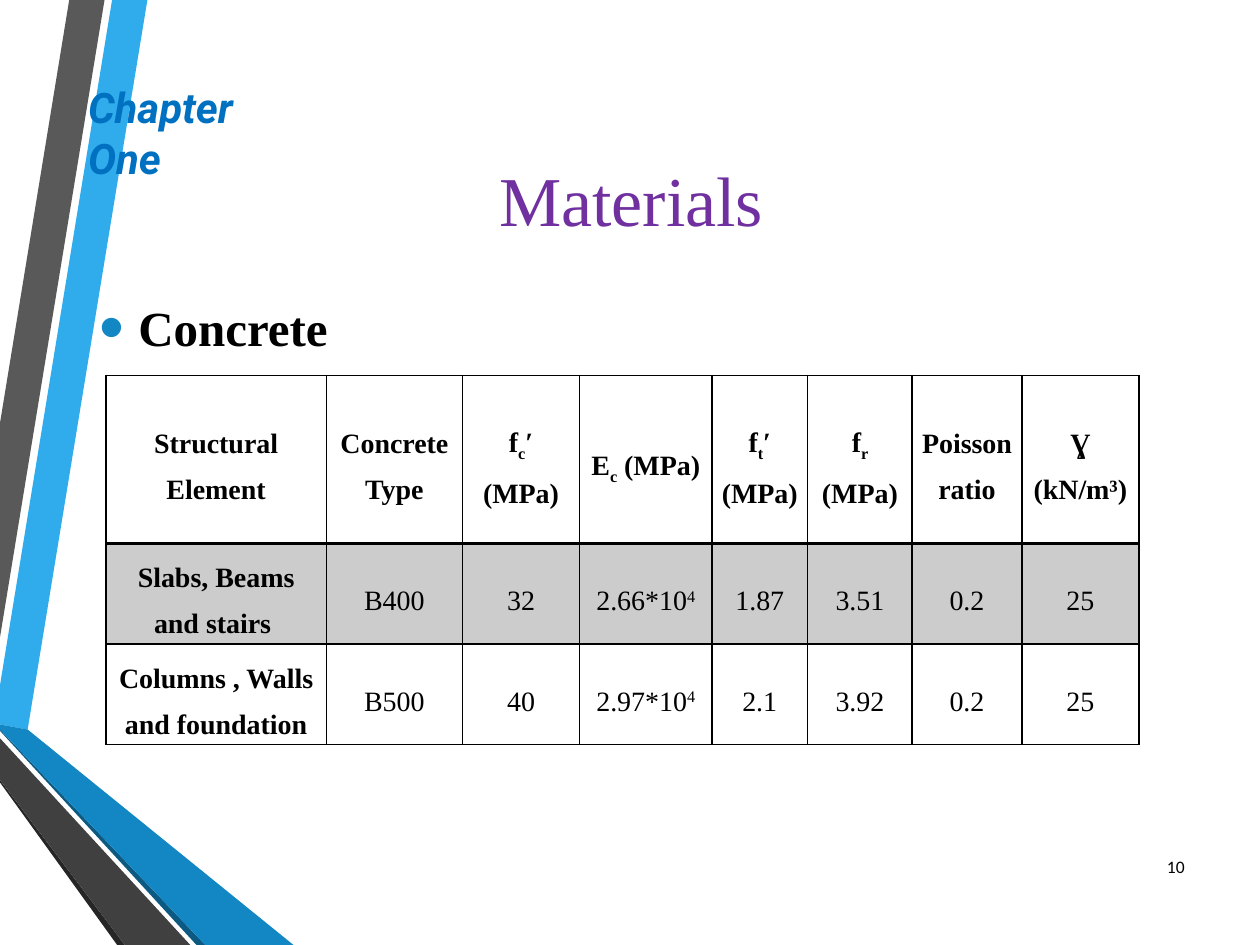
"""Build the concrete materials slide with its property table."""
from typing import NamedTuple

import pptx
import pptx.dml.color
import pptx.enum.text
import pptx.oxml
import pptx.oxml.ns
import pptx.util

Inches = pptx.util.Inches
Pt = pptx.util.Pt
RGBColor = pptx.dml.color.RGBColor
ALIGN = pptx.enum.text.PP_ALIGN
ANCHOR = pptx.enum.text.MSO_ANCHOR
NS = pptx.oxml.ns.nsdecls("a")

BLACK = RGBColor(0x00, 0x00, 0x00)
PURPLE = RGBColor(0x70, 0x30, 0xA0)
BLUE = RGBColor(0x00, 0x70, 0xC0)
SKY = RGBColor(0x30, 0xAC, 0xEC)
OCEAN = RGBColor(0x12, 0x87, 0xC3)
NAVY = RGBColor(0x0C, 0x5A, 0x82)
GRAY = RGBColor(0x59, 0x59, 0x59)
CHARCOAL = RGBColor(0x40, 0x40, 0x40)
SHADE = RGBColor(0x26, 0x26, 0x26)
BAND = RGBColor(0xCC, 0xCC, 0xCC)
SERIF = "Times New Roman"
SUB, SUPER = -25000, 30000


class Run(NamedTuple):
    text: str
    baseline: int = 0


class Ribbon(NamedTuple):
    color: RGBColor
    points: list[tuple[float, float]]


RIBBONS = [
    Ribbon(SKY, [(0, 5.44), (0, 5.75), (0.22, 5.79), (1.17, 0), (0.89, 0)]),
    Ribbon(GRAY, [(0.83, 0), (0.55, 0), (0, 3.36), (0, 5.06)]),
    Ribbon(SHADE, [(0, 6.19), (0, 6.21), (0.93, 7.5), (0.99, 7.5)]),
    Ribbon(NAVY, [(0, 5.79), (0, 5.8), (1.56, 7.5), (1.63, 7.5)]),
    Ribbon(OCEAN, [(0, 5.79), (1.63, 7.5), (2.33, 7.5), (0.22, 5.79), (0, 5.75)]),
    Ribbon(CHARCOAL, [(0, 6.19), (0.99, 7.5), (1.51, 7.5), (0, 5.86)]),
]

COLUMNS = [1.75, 1.08, 0.93, 1.05, 0.76, 0.83, 0.87, 0.93]
ROWS = [1.33, 0.65, 0.63]
CELLS = [
    ["Structural Element", "Concrete Type",
     [Run("f"), Run("c", SUB), Run("ʹ (MPa)")],
     [Run("E"), Run("c", SUB), Run(" (MPa)")],
     [Run("f"), Run("t", SUB), Run("ʹ (MPa)")],
     [Run("f"), Run("r ", SUB), Run("(MPa)")],
     "Poisson ratio", "Ɣ (kN/m³)"],
    ["Slabs, Beams and stairs ", "B400", "32", [Run("2.66*10"), Run("4", SUPER)],
     "1.87", "3.51", "0.2", "25"],
    ["Columns , Walls and foundation", "B500", "40", [Run("2.97*10"), Run("4", SUPER)],
     "2.1", "3.92", "0.2", "25"],
]


def write(tf, text: str | list[Run], *, size: float, font: str = SERIF,
          color: RGBColor = BLACK, bold: bool = False, italic: bool = False,
          align=ALIGN.LEFT, anchor=ANCHOR.MIDDLE):
    tf.word_wrap = True
    tf.vertical_anchor = anchor
    p = tf.paragraphs[0]
    p.alignment = align
    for part in [Run(text)] if isinstance(text, str) else text:
        r = p.add_run()
        r.text = part.text
        r.font.name, r.font.size = font, Pt(size)
        r.font.bold, r.font.italic = bold, italic
        r.font.color.rgb = color
        if part.baseline:
            r.font._element.set("baseline", str(part.baseline))
    return p


def add_box(s, left: float, top: float, width: float, height: float):
    return s.shapes.add_textbox(*map(Inches, (left, top, width, height))).text_frame


def add_ribbon(s, ribbon: Ribbon) -> None:
    points = [(Inches(x), Inches(y)) for x, y in ribbon.points]
    builder = s.shapes.build_freeform(*points[0])
    builder.add_line_segments(points[1:], close=True)
    sp = builder.convert_to_shape()
    sp.shadow.inherit = False
    sp.fill.solid()
    sp.fill.fore_color.rgb = ribbon.color
    sp.line.fill.background()


def add_bullet(p, color: RGBColor) -> None:
    pPr = p._p.get_or_add_pPr()
    pPr.set("marL", str(Inches(0.31)))
    pPr.set("indent", str(-Inches(0.31)))
    for xml in (f'<a:buClr {NS}><a:srgbClr val="{color}"/></a:buClr>',
                f'<a:buSzPct {NS} val="145000"/>',
                f'<a:buFont {NS} typeface="Arial"/>',
                f'<a:buChar {NS} char="•"/>'):
        pPr.append(pptx.oxml.parse_xml(xml))


def set_borders(cell, widths: dict[str, float]) -> None:
    tcPr = cell._tc.get_or_add_tcPr()
    for side, width in widths.items():
        tcPr.append(pptx.oxml.parse_xml(
            f'<a:ln{side} {NS} w="{Pt(width)}"><a:solidFill>'
            f'<a:srgbClr val="{BLACK}"/></a:solidFill></a:ln{side}>'))


def add_properties(s) -> None:
    frame = s.shapes.add_table(len(ROWS), len(COLUMNS), Inches(0.84), Inches(2.98),
                               Inches(sum(COLUMNS)), Inches(sum(ROWS)))
    table = frame.table
    for column, width in zip(table.columns, COLUMNS):
        column.width = Inches(width)
    for row, height in zip(table.rows, ROWS):
        row.height = Inches(height)
    for i, texts in enumerate(CELLS):
        for j, text in enumerate(texts):
            cell = table.cell(i, j)
            cell.margin_left = cell.margin_right = Inches(0.07)
            cell.margin_top = cell.margin_bottom = 0
            cell.vertical_anchor = ANCHOR.MIDDLE
            p = write(cell.text_frame, text, size=16, bold=i == 0 or j == 0,
                      align=ALIGN.CENTER)
            p.line_spacing = 1.5
            p.space_after = Pt(6)
            set_borders(cell, {"L": 1, "R": 1, "T": 2 if i == 1 else 1,
                               "B": 2 if i == 0 else 1})
            if i == 1:
                cell.fill.solid()
                cell.fill.fore_color.rgb = BAND
            else:
                cell.fill.background()


def main() -> None:
    prs = pptx.Presentation()
    prs.slide_width, prs.slide_height = Inches(10), Inches(7.5)
    s = prs.slides.add_slide(prs.slide_layouts[5])
    for ribbon in RIBBONS:
        add_ribbon(s, ribbon)

    title = s.shapes.title
    title.left, title.top = Inches(1.29), Inches(1)
    title.width, title.height = Inches(7.44), Inches(1.15)
    write(title.text_frame, "Materials", size=40, color=PURPLE, align=ALIGN.CENTER)

    body = add_box(s, 0.69, 1.91, 8.62, 4.87)
    body.margin_top = Inches(0.45)
    add_bullet(write(body, "Concrete", size=28, bold=True, anchor=ANCHOR.TOP), OCEAN)

    write(add_box(s, 9.03, 6.68, 0.47, 0.4), "10", size=10, font="Calibri",
          align=ALIGN.RIGHT)
    add_properties(s)

    chapter = add_box(s, 0.6, 0.6, 1.51, 0.5)
    chapter.auto_size = pptx.enum.text.MSO_AUTO_SIZE.SHAPE_TO_FIT_TEXT
    write(chapter, "Chapter One", size=24, font="Roboto", color=BLUE, bold=True,
          italic=True, anchor=ANCHOR.TOP)
    prs.save("out.pptx")


if __name__ == "__main__":
    main()
